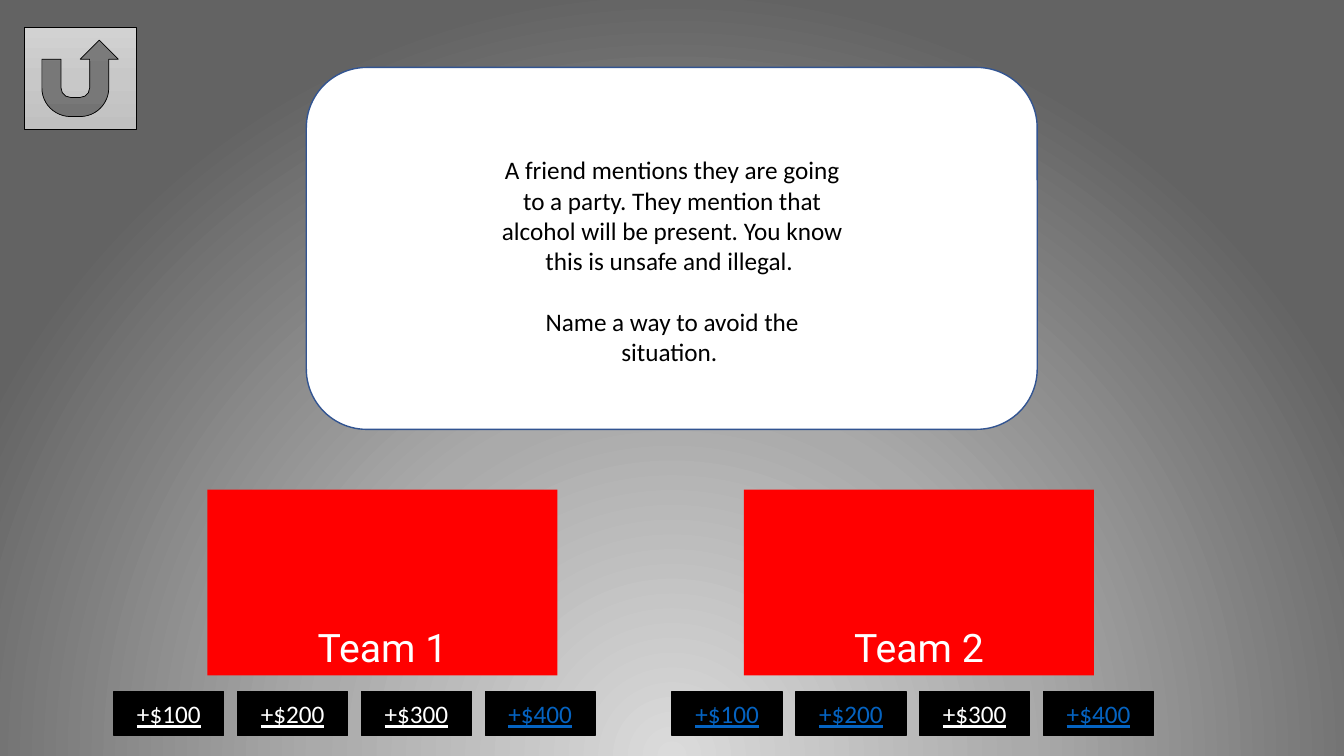
"""Build a quiz question slide with two team score boards."""
from lxml.etree import SubElement
from pptx import Presentation
from pptx.dml.color import RGBColor as RGB
from pptx.enum.shapes import MSO_SHAPE as Kind
from pptx.enum.text import MSO_ANCHOR as Anchor, PP_ALIGN as Align
from pptx.oxml.ns import qn
from pptx.util import Cm, Pt

WHITE = RGB(0xFF, 0xFF, 0xFF)
BLACK = RGB(0, 0, 0)
RED = RGB(0xFF, 0, 0)
NAVY = RGB(0x32, 0x54, 0x91)
LINK = RGB(0x05, 0x63, 0xC1)
GLOW = {0: RGB(0xDB, 0xDB, 0xDB), 46: RGB(0xAA, 0xAA, 0xAA), 100: RGB(0x63, 0x63, 0x63)}
STEEL = {0: RGB(0xD2, 0xD2, 0xD2), 50: RGB(0xC8, 0xC8, 0xC8), 100: RGB(0xC0, 0xC0, 0xC0)}


def blend(fill, root, stops):
    """Give the fill these stops and return its gradient element."""
    fill.gradient()
    grad = root.find(".//" + qn("a:gradFill"))
    for part in list(grad):
        grad.remove(part)
    row = SubElement(grad, qn("a:gsLst"))
    for at, tone in stops.items():
        stop = SubElement(row, qn("a:gs"), pos=str(at * 1000))
        SubElement(stop, qn("a:srgbClr"), val=str(tone))
    return grad


def write(frame, lines, anchor, style):
    """Fill a text frame with centred lines in one style."""
    frame.word_wrap = True
    frame.vertical_anchor = anchor
    for i, line in enumerate(lines):
        para = frame.add_paragraph() if i else frame.paragraphs[0]
        para.alignment = Align.CENTER
        if i:
            para.space_before = Pt(21.6)
        run = para.add_run()
        run.text = line
        for key, value in style.items():
            if key == "color":
                run.font.color.rgb = value
            else:
                setattr(run.font, key, value)


deck = Presentation()
deck.slide_width, deck.slide_height = Cm(33.87), Cm(19.05)
slide = deck.slides.add_slide(deck.slide_layouts[6])
shapes = slide.shapes

grad = blend(slide.background.fill, slide.element, GLOW)
ring = SubElement(grad, qn("a:path"), path="circle")
SubElement(ring, qn("a:fillToRect"), l="50000", t="130000", r="50000", b="-30000")

card = shapes.add_shape(Kind.ROUNDED_RECTANGLE, Cm(7.72), Cm(1.7), Cm(18.42), Cm(9.12))
card.shadow.inherit = False
card.fill.solid()
card.fill.fore_color.rgb = WHITE
card.line.color.rgb = NAVY
card.line.width = Pt(1)

back = shapes.add_shape(Kind.ACTION_BUTTON_RETURN, Cm(0.61), Cm(0.69), Cm(2.82), Cm(2.57))
back.shadow.inherit = False
grad = blend(back.fill, back.element, STEEL)
SubElement(grad, qn("a:lin"), ang="5400000", scaled="0")
back.line.color.rgb = BLACK
back.line.width = Pt(0.5)

prompt = shapes.add_textbox(Cm(12.24), Cm(4.19), Cm(9.4), Cm(4.75))
lines = [
    "A friend mentions they are going to a party. They mention that alcohol will be present. "
    "You know this is unsafe and illegal. ",
    "Name a way to avoid the situation. ",
]
write(prompt.text_frame, lines, Anchor.MIDDLE,
      {"name": "Calibri", "size": Pt(18), "color": BLACK})

teams = [
    ("Team 1", 5.23, 2.87, [WHITE, WHITE, WHITE, LINK]),
    ("Team 2", 18.75, 16.94, [LINK, LINK, WHITE, LINK]),
]
for name, left, start, tones in teams:
    board = shapes.add_shape(Kind.RECTANGLE, Cm(left), Cm(12.34), Cm(8.82), Cm(4.68))
    board.shadow.inherit = False
    board.fill.solid()
    board.fill.fore_color.rgb = RED
    board.line.fill.background()
    write(board.text_frame, [name], Anchor.BOTTOM,
          {"name": "Roboto", "size": Pt(28), "color": WHITE})
    for i, tone in enumerate(tones):
        score = shapes.add_shape(Kind.RECTANGLE, Cm(start + i * 3.12), Cm(17.42), Cm(2.77), Cm(1.12))
        score.shadow.inherit = False
        score.fill.solid()
        score.fill.fore_color.rgb = BLACK
        score.line.color.rgb = BLACK
        score.line.width = Pt(1)
        write(score.text_frame, [f"+${(i + 1) * 100}"], Anchor.MIDDLE,
              {"name": "Calibri", "size": Pt(18), "underline": True, "color": tone})

deck.save("out.pptx")
